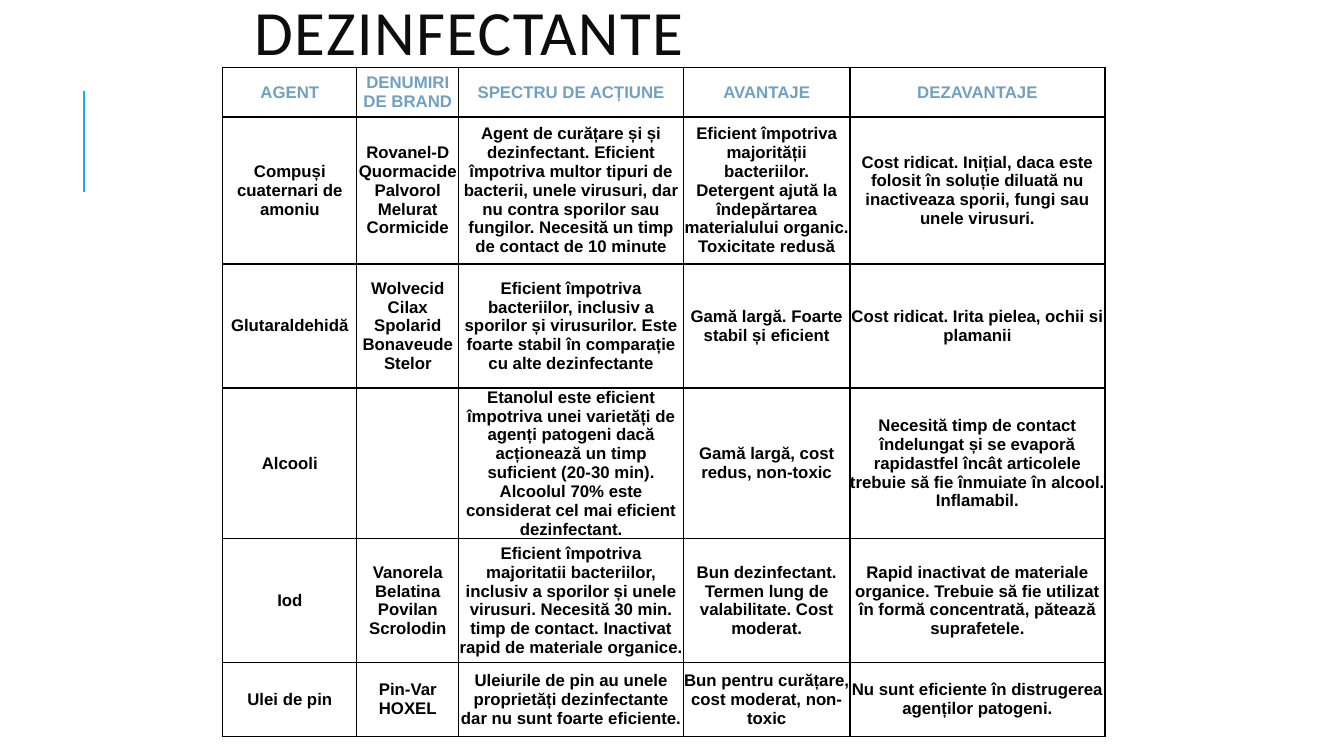
from dataclasses import dataclass

from lxml.etree import SubElement
from pptx import Presentation
from pptx.dml.color import RGBColor
from pptx.enum.shapes import MSO_CONNECTOR as Connector
from pptx.enum.text import MSO_ANCHOR as Anchor, MSO_AUTO_SIZE as AutoSize, PP_ALIGN as Align
from pptx.oxml.ns import qn
from pptx.slide import Slide
from pptx.table import _Cell as Cell
from pptx.util import Inches, Pt

BLACK = "000000"
HEADER_BLUE = "70A1C0"
ACCENT_BLUE = "1CADE4"
TITLE_INK = "0D0D0D"
COLUMN_WIDTHS = (1.33, 1.01, 2.23, 1.65, 2.53)
ROW_HEIGHTS = (0.49, 1.46, 1.23, 1.26, 1.23, 0.73)
HEADERS = ("AGENT", "DENUMIRI DE BRAND", "SPECTRU DE ACȚIUNE", "AVANTAJE", "DEZAVANTAJE")


@dataclass(frozen=True)
class Disinfectant:
    agent: str
    brands: tuple[str, ...]
    spectrum: str
    advantages: str
    drawbacks: str

    def cells(self) -> list[tuple[str, ...]]:
        return [(self.agent,), self.brands, (self.spectrum,),
                (self.advantages,), (self.drawbacks,)]


DISINFECTANTS = (
    Disinfectant(
        "Compuși cuaternari de amoniu",
        ("Rovanel-D", "Quormacide", "Palvorol", "Melurat", "Cormicide"),
        "Agent de curățare și și dezinfectant. Eficient împotriva multor tipuri de bacterii, "
        "unele virusuri, dar nu contra sporilor sau fungilor. Necesită un timp de contact "
        "de 10 minute",
        "Eficient împotriva majorității bacteriilor. Detergent ajută la îndepărtarea "
        "materialului organic. Toxicitate redusă",
        "Cost ridicat. Inițial, daca este folosit în soluție diluată nu inactiveaza sporii, "
        "fungi sau unele virusuri."),
    Disinfectant(
        "Glutaraldehidă",
        ("Wolvecid", "Cilax", "Spolarid", "Bonaveude Stelor"),
        "Eficient împotriva bacteriilor, inclusiv a sporilor și virusurilor. Este foarte "
        "stabil în comparație cu alte dezinfectante",
        "Gamă largă. Foarte stabil și eficient",
        "Cost ridicat. Irita pielea, ochii si plamanii"),
    Disinfectant(
        "Alcooli",
        (),
        "Etanolul este eficient împotriva unei varietăți de agenți patogeni dacă acționează "
        "un timp suficient (20-30 min). Alcoolul 70% este considerat cel mai eficient "
        "dezinfectant.",
        "Gamă largă, cost redus, non-toxic",
        "Necesită timp de contact îndelungat și se evaporă rapidastfel încât articolele "
        "trebuie să fie înmuiate în alcool. Inflamabil."),
    Disinfectant(
        "Iod",
        ("Vanorela", "Belatina", "Povilan", "Scrolodin"),
        "Eficient împotriva majoritatii bacteriilor, inclusiv a sporilor și unele virusuri. "
        "Necesită 30 min. timp de contact. Inactivat rapid de materiale organice.",
        "Bun dezinfectant. Termen lung de valabilitate. Cost moderat.",
        "Rapid inactivat de materiale organice. Trebuie să fie utilizat în formă "
        "concentrată, pătează suprafetele."),
    Disinfectant(
        "Ulei de pin",
        ("Pin-Var", "HOXEL"),
        "Uleiurile de pin au unele proprietăți dezinfectante dar nu sunt foarte eficiente. ",
        "Bun pentru curățare, cost moderat, non-toxic",
        "Nu sunt eficiente în distrugerea agenților patogeni."),
)


def color(value: str) -> RGBColor:
    return RGBColor.from_string(value)


def draw_borders(cell: Cell) -> None:
    properties = cell._tc.get_or_add_tcPr()
    for position, side in enumerate(("lnL", "lnR", "lnT", "lnB")):
        line = SubElement(properties, qn(f"a:{side}"), w=str(Pt(1)))
        fill = SubElement(line, qn("a:solidFill"))
        SubElement(fill, qn("a:srgbClr"), val=BLACK)
        properties.insert(position, line)


def fill_cell(cell: Cell, lines: tuple[str, ...], ink: str) -> None:
    cell.margin_left = cell.margin_right = cell.margin_top = cell.margin_bottom = 0
    cell.vertical_anchor = Anchor.MIDDLE
    cell.fill.background()
    draw_borders(cell)
    frame = cell.text_frame
    for index, line in enumerate(lines):
        para = frame.add_paragraph() if index else frame.paragraphs[0]
        para.alignment = Align.CENTER
        span = para.add_run()
        span.text = line
        span.font.name = "Arial"
        span.font.size = Pt(12)
        span.font.bold = True
        span.font.color.rgb = color(ink)


def add_accent_line(page: Slide) -> None:
    line = page.shapes.add_connector(
        Connector.STRAIGHT, Inches(0.83), Inches(1.9), Inches(0.83), Inches(0.9))
    line.line.color.rgb = color(ACCENT_BLUE)
    line.line.width = Pt(1.5)
    SubElement(line._element.spPr, qn("a:effectLst"))


def add_disinfectant_table(page: Slide) -> None:
    table = page.shapes.add_table(
        len(ROW_HEIGHTS), len(COLUMN_WIDTHS), Inches(2.21), Inches(0.67),
        Inches(sum(COLUMN_WIDTHS)), Inches(sum(ROW_HEIGHTS))).table
    table.first_row = table.horz_banding = False
    for column, width in zip(table.columns, COLUMN_WIDTHS):
        column.width = Inches(width)
    for row, height in zip(table.rows, ROW_HEIGHTS):
        row.height = Inches(height)
    for cell, header in zip(table.rows[0].cells, HEADERS):
        fill_cell(cell, (header,), HEADER_BLUE)
    for row_index, disinfectant in enumerate(DISINFECTANTS, start=1):
        for cell, lines in zip(table.rows[row_index].cells, disinfectant.cells()):
            fill_cell(cell, lines, BLACK)


def set_title(page: Slide) -> None:
    title = page.shapes.title
    title.left, title.top = Inches(2.42), Inches(0)
    title.width, title.height = Inches(8.5), Inches(0.75)
    frame = title.text_frame
    frame.auto_size = AutoSize.NONE
    frame.word_wrap = True
    frame.vertical_anchor = Anchor.MIDDLE
    para = frame.paragraphs[0]
    para.alignment = Align.LEFT
    para.line_spacing = 0.8
    span = para.add_run()
    span.text = "DEZINFECTANTE"
    span.font.name = "Calibri"
    span.font.size = Pt(45)
    span.font.color.rgb = color(TITLE_INK)
    span.font._element.set("spc", "100")


def main() -> None:
    deck = Presentation()
    deck.slide_width, deck.slide_height = Inches(13.33), Inches(7.5)
    page = deck.slides.add_slide(deck.slide_layouts.get_by_name("Title Only"))
    add_accent_line(page)
    add_disinfectant_table(page)
    set_title(page)
    deck.save("out.pptx")


if __name__ == "__main__":
    main()
